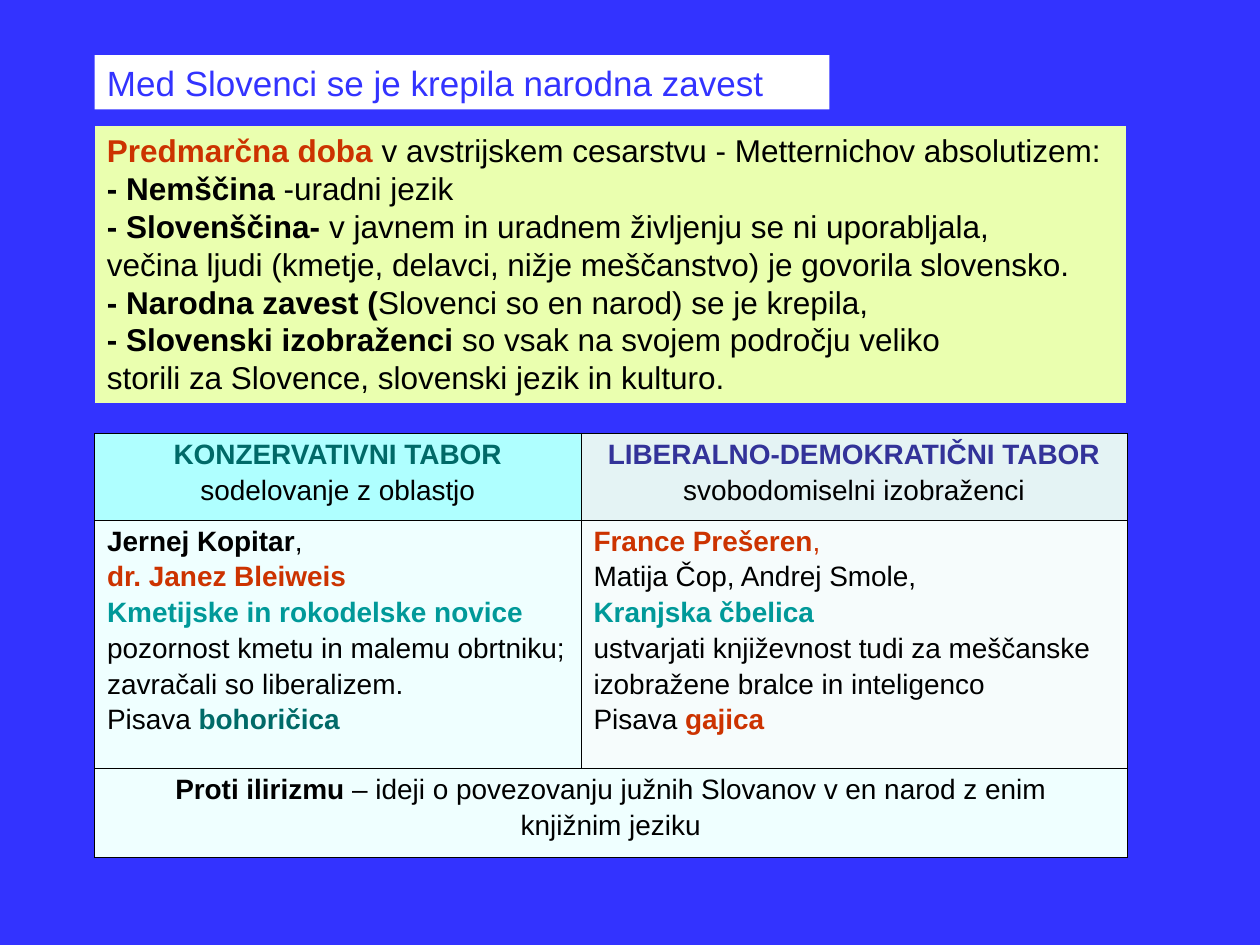
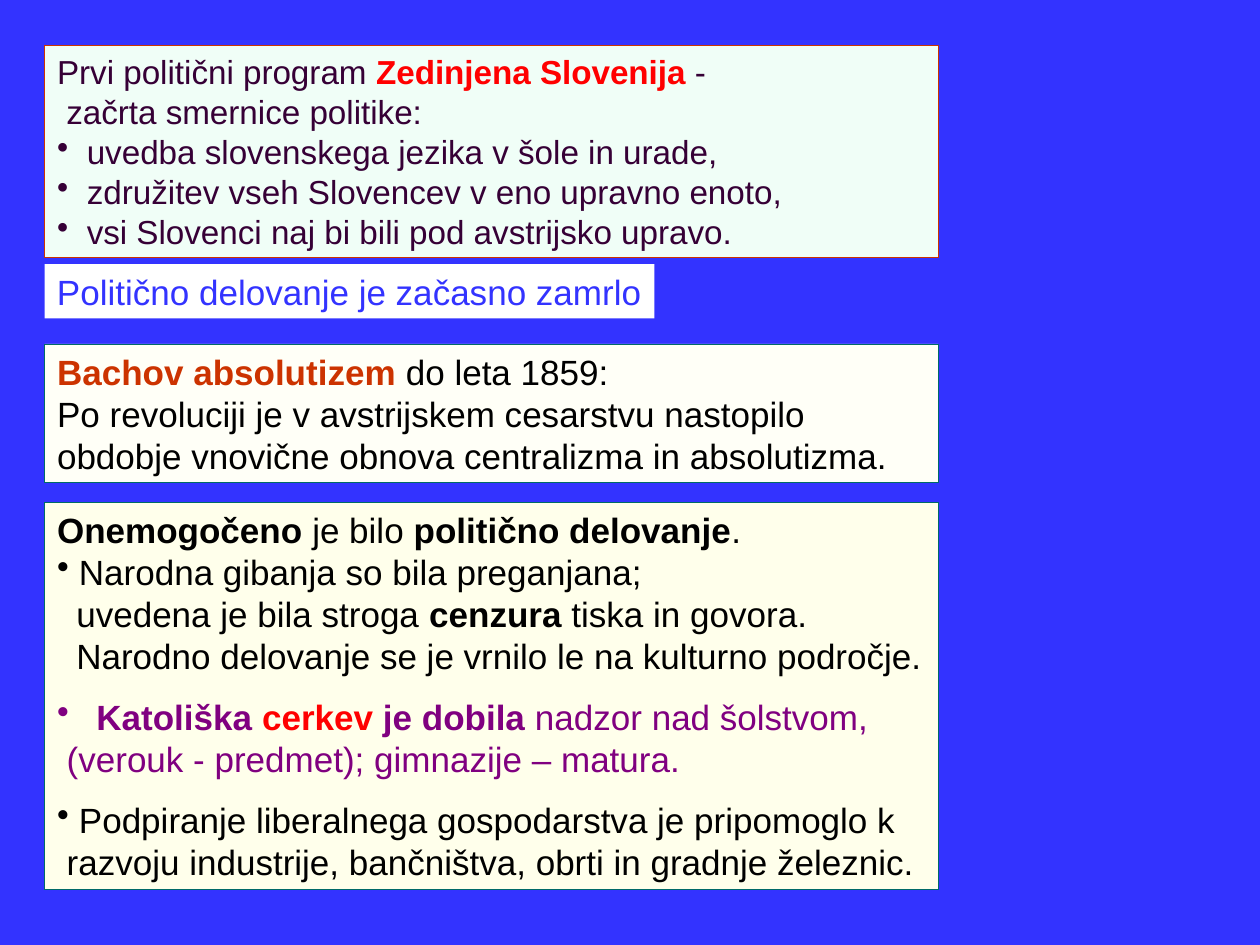
import dataclasses

import lxml.etree
import pptx
import pptx.dml.color
import pptx.enum.shapes
import pptx.enum.text
import pptx.oxml.ns
import pptx.util

Pt = pptx.util.Pt
ALIGN = pptx.enum.text.PP_ALIGN

FONT = "Arial"
BLUE = "3333FF"
WHITE = "FFFFFF"
BLACK = "000000"
RUST = "CC3300"
RED = "FF0000"
PINE = "006A68"
TEAL = "009999"
INDIGO = "333399"
PLUM = "360036"
PURPLE = "800080"

LINE_FACTOR = 1.2
ROW_GAP = 2.65
TOPIC_GAP = 10.8


@dataclasses.dataclass
class Line:
    wording: list
    margin: float = 0
    bullet: bool = False
    gap: float = 0


def plain(text, color=BLACK):
    return text, color, False


def bold(text, color=BLACK):
    return text, color, True


def rgb(value):
    return pptx.dml.color.RGBColor.from_string(value)


def paint(target, color):
    target.fill.solid()
    target.fill.fore_color.rgb = rgb(color)


def write_lines(frame, lines, size, align=ALIGN.LEFT, pitch=None, gap=0):
    for index, line in enumerate(lines):
        paragraph = frame.paragraphs[0] if index == 0 else frame.add_paragraph()
        properties = paragraph._p.get_or_add_pPr()
        properties.set("marL", str(Pt(line.margin)))
        properties.set("indent", str(-Pt(line.margin) if line.bullet else 0))
        if line.bullet:
            mark = lxml.etree.SubElement(properties, pptx.oxml.ns.qn("a:buChar"))
            mark.set("char", "•")
        paragraph.alignment = align
        if pitch:
            paragraph.line_spacing = Pt(pitch)
        if index:
            paragraph.space_before = Pt(line.gap or gap)
        for text, color, is_bold in line.wording:
            run = paragraph.add_run()
            run.text = text
            run.font.name = FONT
            run.font.size = Pt(size)
            run.font.bold = is_bold
            run.font.color.rgb = rgb(color)


def add_panel(slide, box, fill, lines, size, border=None, border_width=0.25, wrap=True):
    panel = slide.shapes.add_shape(
        pptx.enum.shapes.MSO_SHAPE.RECTANGLE, *[Pt(length) for length in box])
    panel.shadow.inherit = False
    paint(panel, fill)
    if border:
        panel.line.color.rgb = rgb(border)
        panel.line.width = Pt(border_width)
    else:
        panel.line.fill.background()
    frame = panel.text_frame
    frame.word_wrap = wrap
    frame.vertical_anchor = pptx.enum.text.MSO_ANCHOR.TOP
    frame.auto_size = pptx.enum.text.MSO_AUTO_SIZE.SHAPE_TO_FIT_TEXT
    write_lines(frame, lines, size, pitch=size * LINE_FACTOR)


def add_heading(slide, left, top, width, text, wrap=True):
    add_panel(slide, (left, top, width, 31), WHITE, [Line([plain(text, BLUE)])], 20, wrap=wrap)


def outline_cell(cell):
    properties = cell._tc.get_or_add_tcPr()
    for index, side in enumerate(("a:lnL", "a:lnR", "a:lnT", "a:lnB")):
        edge = lxml.etree.Element(pptx.oxml.ns.qn(side), w=str(Pt(0.25)))
        fill = lxml.etree.SubElement(edge, pptx.oxml.ns.qn("a:solidFill"))
        lxml.etree.SubElement(fill, pptx.oxml.ns.qn("a:srgbClr"), val=BLACK)
        properties.insert(index, edge)


def add_camps_table(slide, box):
    left, top, width, height = box
    heads = [
        ("AFFFFF", [Line([bold("KONZERVATIVNI TABOR", PINE)]),
                    Line([plain("sodelovanje z oblastjo")])]),
        ("E4F3F4", [Line([bold("LIBERALNO-DEMOKRATIČNI TABOR", INDIGO)]),
                    Line([plain("svobodomiselni izobraženci")])]),
    ]
    members = [
        ("EFFFFF", [Line([bold("Jernej Kopitar"), plain(",")]),
                    Line([bold("dr. Janez Bleiweis", RUST)]),
                    Line([bold("Kmetijske in rokodelske novice", TEAL)]),
                    Line([plain("pozornost kmetu in malemu obrtniku;")]),
                    Line([plain("zavračali so liberalizem.")]),
                    Line([plain("Pisava "), bold("bohoričica", PINE)])]),
        ("F6FCFC", [Line([bold("France Prešeren", RUST), plain(",", RUST)]),
                    Line([plain("Matija Čop, Andrej Smole,")]),
                    Line([bold("Kranjska čbelica", TEAL)]),
                    Line([plain("ustvarjati književnost tudi za meščanske")]),
                    Line([plain("izobražene bralce in inteligenco")]),
                    Line([plain("Pisava "), bold("gajica", RUST)])]),
    ]
    shared = [
        ("EFFFFF", [Line([bold("Proti ilirizmu "),
                          plain("– ideji o povezovanju južnih Slovanov v en narod z enim")]),
                    Line([plain("knjižnim jeziku")])]),
        ("EFFFFF", []),
    ]
    rows = [(49.5, ALIGN.CENTER, heads), (142, ALIGN.LEFT, members), (51, ALIGN.CENTER, shared)]
    camps = slide.shapes.add_table(
        len(rows), 2, Pt(left), Pt(top), Pt(width), Pt(height)).table
    camps.first_row = camps.horz_banding = False
    camps.columns[0].width = Pt(278)
    camps.columns[1].width = Pt(width - 278)
    camps.cell(2, 0).merge(camps.cell(2, 1))
    for row, (row_height, align, contents) in enumerate(rows):
        camps.rows[row].height = Pt(row_height)
        for column, (fill, lines) in enumerate(contents):
            cell = camps.cell(row, column)
            paint(cell, fill)
            outline_cell(cell)
            write_lines(cell.text_frame, lines, 16, align, gap=ROW_GAP)


def new_slide(deck):
    slide = deck.slides.add_slide(deck.slide_layouts[6])
    paint(slide.background, BLUE)
    return slide


def build_awakening(deck):
    slide = new_slide(deck)
    left, width = 54, 590
    add_panel(slide, (left, 71.5, width, 159), "EAFFAF", [
        Line([bold("Predmarčna doba", RUST),
              plain(" v avstrijskem cesarstvu - Metternichov absolutizem:")]),
        Line([bold("- Nemščina"), plain(" -uradni jezik")]),
        Line([bold("- Slovenščina- "),
              plain("v javnem in uradnem življenju se ni uporabljala,")]),
        Line([plain("večina ljudi (kmetje, delavci, nižje meščanstvo) je govorila slovensko.")]),
        Line([bold("- Narodna zavest ("), plain("Slovenci so en narod) se je krepila,")]),
        Line([bold("- Slovenski izobraženci "), plain("so vsak na svojem področju veliko")]),
        Line([plain("storili za Slovence, slovenski jezik in kulturo.")]),
    ], 18, BLUE, 0.75)
    add_camps_table(slide, (left, 247.5, width, 242.5))
    add_heading(slide, left, 31.5, 420, "Med Slovenci se je krepila narodna zavest")


def build_absolutism(deck):
    slide = new_slide(deck)
    left, width = 25.5, 510.5
    add_panel(slide, (left, 26, width, 121), "F0FEF7", [
        Line([plain("Prvi politični program ", PLUM), bold("Zedinjena Slovenija", RED),
              plain(" -", PLUM)]),
        Line([plain("začrta smernice politike:", PLUM)], 5.3),
        *[Line([plain(demand, PLUM)], 17, True) for demand in (
            "uvedba slovenskega jezika v šole in urade,",
            "združitev vseh Slovencev v eno upravno enoto,",
            "vsi Slovenci naj bi bili pod avstrijsko upravo.")],
    ], 19, RUST)
    add_heading(slide, left, 151, 348.5, "Politično delovanje je začasno zamrlo", wrap=False)
    add_panel(slide, (left, 196.5, width, 79), "FFFFF7", [
        Line([bold("Bachov absolutizem", RUST), plain(" do leta 1859:")]),
        Line([plain("Po revoluciji je v avstrijskem cesarstvu nastopilo")]),
        Line([plain("obdobje vnovične obnova centralizma in absolutizma.")]),
    ], 20, PINE)
    add_panel(slide, (left, 287, width, 221), "FFFFEB", [
        Line([bold("Onemogočeno"), plain(" je bilo "), bold("politično delovanje"), plain(".")]),
        Line([plain("Narodna gibanja so bila preganjana;")], 12.5, True),
        Line([plain("uvedena je bila stroga "), bold("cenzura"), plain(" tiska in govora.")], 11),
        Line([plain("Narodno delovanje se je vrnilo le na kulturno področje.")], 11),
        Line([bold("Katoliška ", PURPLE), bold("cerkev", RED), bold(" je dobila", PURPLE),
              plain(" nadzor nad šolstvom,", PURPLE)], 22.5, True, TOPIC_GAP),
        Line([plain("(verouk - predmet); gimnazije – matura.", PURPLE)], 5.5),
        Line([plain("Podpiranje liberalnega gospodarstva je pripomoglo k")], 12.5, True, TOPIC_GAP),
        Line([plain("razvoju industrije, bančništva, obrti in gradnje železnic.")], 5.5),
    ], 20, PINE)


def main():
    deck = pptx.Presentation()
    deck.slide_width = Pt(720)
    deck.slide_height = Pt(540)
    build_awakening(deck)
    build_absolutism(deck)
    deck.save("out.pptx")


if __name__ == "__main__":
    main()
